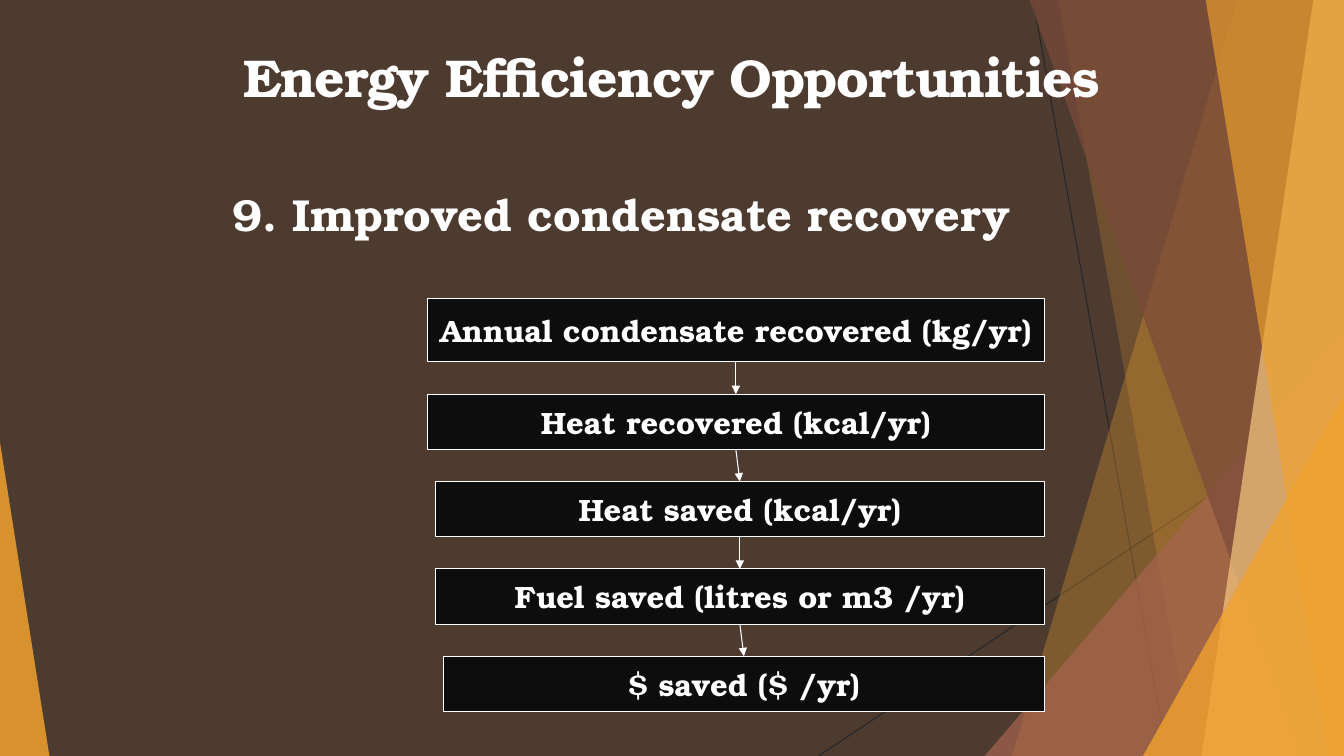
from dataclasses import dataclass

from lxml import etree
from pptx import Presentation
from pptx.dml.color import RGBColor
from pptx.enum.shapes import MSO_CONNECTOR, MSO_SHAPE
from pptx.enum.text import MSO_ANCHOR, MSO_AUTO_SIZE, PP_ALIGN
from pptx.oxml.ns import qn
from pptx.util import Pt

STRAIGHT = MSO_CONNECTOR.STRAIGHT
RECTANGLE = MSO_SHAPE.RECTANGLE
TRIANGLE = MSO_SHAPE.ISOSCELES_TRIANGLE
TOP, MIDDLE = MSO_ANCHOR.TOP, MSO_ANCHOR.MIDDLE
LEFT, CENTER = PP_ALIGN.LEFT, PP_ALIGN.CENTER
BOTTOM_SITE, TOP_SITE = 2, 0

PAGE_WIDTH, PAGE_HEIGHT = 960, 540
BAND_TOP = -0.7


@dataclass(frozen=True)
class Theme:
    font: str = "TeX Gyre Bonum"
    background: str = "4E3B30"
    text: str = "FFFFFF"
    box: str = "0D0D0D"
    thin_line: str = "262626"
    amber: str = "F0A22E"
    sand: str = "F6C782"
    rust: str = "A5644E"
    brown: str = "7C4B3B"
    title_size: int = 38
    heading_size: int = 32
    box_size: int = 22
    line_width: float = 0.75


THEME = Theme()

# Flow steps: text and left edge
STEPS = [
    ("Annual condensate recovered (kg/yr)", 305.3),
    ("Heat recovered (kcal/yr)", 305.3),
    ("Heat saved (kcal/yr)", 311),
    ("Fuel saved (litres or m3 /yr)", 311),
    ("$ saved ($ /yr)", 316.8),
]
STEP_RIGHT = 746
FIRST_TOP, FIRST_HEIGHT = 213.1, 45.4
SECOND_TOP, STEP_HEIGHT, STEP_PITCH = 281.5, 39.6, 62.4


def rgb(color):
    return RGBColor.from_string(color)


def paint(shape, color, opacity):
    """Fill a decoration with a see-through colour and no outline."""
    shape.shadow.inherit = False
    shape.line.fill.background()
    shape.fill.solid()
    shape.fill.fore_color.rgb = rgb(color)
    fill_color = shape._element.spPr.find(qn("a:solidFill"))[0]
    etree.SubElement(fill_color, qn("a:alpha"), val=str(opacity * 1000))


def add_band(page, top_x, bottom_x, color, opacity):
    """Slanted band that reaches the right edge of the page."""
    builder = page.shapes.build_freeform(Pt(top_x), Pt(BAND_TOP))
    corners = [(PAGE_WIDTH, BAND_TOP), (PAGE_WIDTH, PAGE_HEIGHT), (bottom_x, PAGE_HEIGHT)]
    builder.add_line_segments([(Pt(x), Pt(y)) for x, y in corners], close=True)
    paint(builder.convert_to_shape(), color, opacity)


def add_corner(page, left, top, width, apex, color, opacity):
    """Right triangle that stands on the bottom edge of the page."""
    shape = page.shapes.add_shape(
        TRIANGLE, Pt(left), Pt(top), Pt(width), Pt(PAGE_HEIGHT - top))
    shape.adjustments[0] = apex
    paint(shape, color, opacity)


def add_line(page, color, start=(0, 0), end=(0, 0)):
    line = page.shapes.add_connector(STRAIGHT, *(Pt(value) for value in (*start, *end)))
    line.line.color.rgb = rgb(color)
    line.line.width = Pt(THEME.line_width)
    etree.SubElement(line._element.spPr, qn("a:effectLst"))
    return line


def add_arrow(page, upper, lower):
    arrow = add_line(page, THEME.text)
    arrow.begin_connect(upper, BOTTOM_SITE)
    arrow.end_connect(lower, TOP_SITE)
    outline = arrow._element.spPr.find(qn("a:ln"))
    etree.SubElement(outline, qn("a:tailEnd"), type="triangle")


def write(shape, text, size, align, anchor, wrap=True):
    frame = shape.text_frame
    frame.text = text
    frame.auto_size = MSO_AUTO_SIZE.NONE
    frame.word_wrap = wrap
    frame.vertical_anchor = anchor
    para = frame.paragraphs[0]
    para.alignment = align
    para.font.name = THEME.font
    para.font.size = Pt(size)
    para.font.bold = True
    para.font.color.rgb = rgb(THEME.text)
    return para


def add_step(page, text, left, top, height):
    box = page.shapes.add_shape(
        RECTANGLE, Pt(left), Pt(top), Pt(STEP_RIGHT - left), Pt(height))
    box.shadow.inherit = False
    box.fill.solid()
    box.fill.fore_color.rgb = rgb(THEME.box)
    box.line.color.rgb = rgb(THEME.text)
    box.line.width = Pt(THEME.line_width)
    write(box, text, THEME.box_size, CENTER, MIDDLE, wrap=False)
    return box


def add_title(page, text):
    title = page.shapes.title
    title.left, title.top, title.width, title.height = Pt(142.6), Pt(28), Pt(697.7), Pt(72)
    para = write(title, text, THEME.title_size, LEFT, TOP)
    title.text_frame.margin_left = Pt(31)
    para.runs[0].font._element.set("spc", "-100")
    # Bring the title in front of the decoration
    page.shapes._spTree.append(title._element)


def add_heading(page, text):
    heading = page.shapes.add_textbox(Pt(159), Pt(129.6), Pt(658), Pt(46))
    write(heading, text, THEME.heading_size, LEFT, TOP)


def add_decoration(page):
    add_line(page, THEME.thin_line, (738, 0), (833.8, PAGE_HEIGHT))
    add_line(page, THEME.thin_line, (PAGE_WIDTH, 290.2), (584.6, PAGE_HEIGHT))
    add_band(page, 884.2, 722.9, THEME.amber, 30)
    add_band(page, 756, 851.8, THEME.amber, 20)
    add_corner(page, 703.4, 240, 256.6, 1, THEME.rust, 72)
    add_band(page, 735.1, 929.5, THEME.brown, 70)
    add_band(page, 938.2, 858.2, THEME.sand, 70)
    add_band(page, 861.1, 949, THEME.amber, 65)
    add_corner(page, 816.5, 283, 143.5, 1, THEME.amber, 80)
    add_corner(page, 0, 316, 35.3, 0, THEME.amber, 85)


def add_flow(page):
    boxes = []
    for index, (text, left) in enumerate(STEPS):
        if index == 0:
            top, height = FIRST_TOP, FIRST_HEIGHT
        else:
            top, height = SECOND_TOP + (index - 1) * STEP_PITCH, STEP_HEIGHT
        boxes.append(add_step(page, text, left, top, height))
    for upper, lower in zip(boxes, boxes[1:]):
        add_arrow(page, upper, lower)


def main():
    deck = Presentation()
    deck.slide_width, deck.slide_height = Pt(PAGE_WIDTH), Pt(PAGE_HEIGHT)
    page = deck.slides.add_slide(deck.slide_layouts.get_by_name("Title Only"))
    page.background.fill.solid()
    page.background.fill.fore_color.rgb = rgb(THEME.background)

    add_decoration(page)
    add_heading(page, "9. Improved condensate recovery")
    add_flow(page)
    add_title(page, "Energy Efficiency Opportunities")
    deck.save("out.pptx")


if __name__ == "__main__":
    main()
